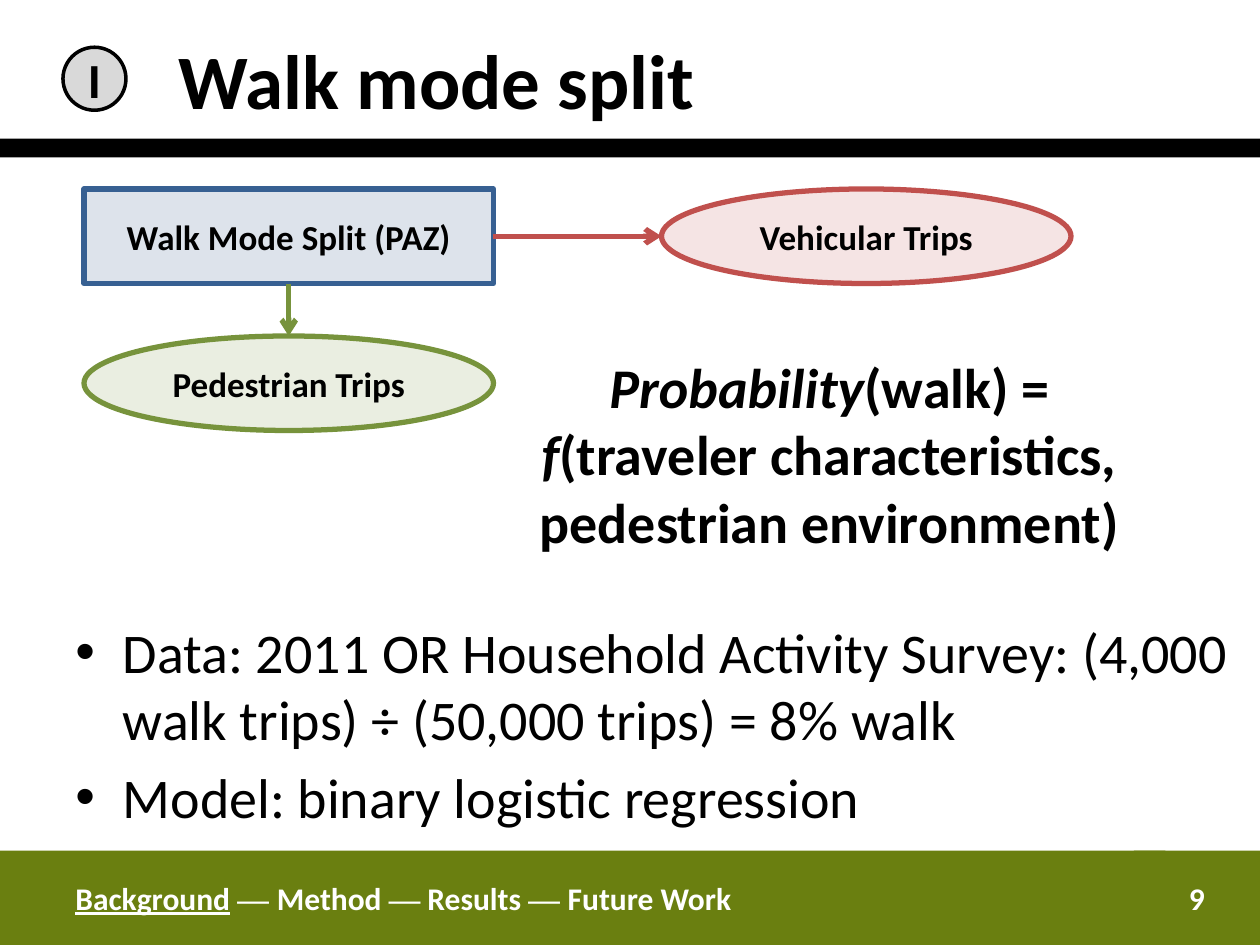
import pptx
import pptx.util
import pptx.dml.color
import pptx.enum.shapes
import pptx.enum.text
import pptx.oxml
import pptx.oxml.ns

RGB = pptx.dml.color.RGBColor
Pt = pptx.util.Pt
KIND = pptx.enum.shapes.MSO_SHAPE
ALIGN = pptx.enum.text.PP_ALIGN
ANCHOR = pptx.enum.text.MSO_ANCHOR

BLACK = RGB(0x00, 0x00, 0x00)
WHITE = RGB(0xFF, 0xFF, 0xFF)
GRAY = RGB(0xD9, 0xD9, 0xD9)
OLIVE = RGB(0x6A, 0x7F, 0x10)
NAVY = RGB(0x1F, 0x49, 0x7D)
BLUE = RGB(0x37, 0x60, 0x92)
RED = RGB(0xC0, 0x50, 0x4D)
GREEN = RGB(0x77, 0x93, 0x3C)

SANS = "Calibri"
SERIF = "Times New Roman"
COLS, ROWS = 120, 90
WIDE, HIGH = pptx.util.Inches(10), pptx.util.Inches(7.5)

BOLD = {"name": SANS, "bold": True}
PLAIN = {"name": SANS, "size": Pt(32)}
TITLE = {**BOLD, "size": Pt(44)}
BADGE = {**BOLD, "size": Pt(28)}
NODE = {**BOLD, "size": Pt(20)}
MATH = {**BOLD, "size": Pt(32)}
FOOT = {**BOLD, "size": Pt(18)}
ITALIC = {"italic": True}
DASH = {"name": SERIF}


def cells(*nums):
    """Turn column, row, column span and row span into lengths."""
    return [round(n * size / part) for n, size, part
            in zip(nums, (WIDE, HIGH) * 2, (COLS, ROWS) * 2)]


def apply(item, form):
    for key, val in form.items():
        setattr(item, key, val)


def add_xml(node, tag, **attrs):
    child = node.makeelement(pptx.oxml.ns.qn(tag), attrs)
    node.append(child)
    return child


def write(para, runs, form, color):
    """Add runs of (text, changes to the format)."""
    for text, diff in runs:
        run = para.add_run()
        run.text = text
        apply(run.font, {**form, **diff})
        run.font.color.rgb = color


def set_frame(shape, anchor=ANCHOR.MIDDLE, **more):
    apply(shape.text_frame,
          {"word_wrap": True, "vertical_anchor": anchor, **more})
    return shape.text_frame


def add_block(slide, kind, place, fill, alpha=None, edge=None, weight=3):
    shape = slide.shapes.add_shape(kind, *cells(*place))
    shape.shadow.inherit = False
    shape.fill.solid()
    shape.fill.fore_color.rgb = fill
    if alpha:
        tint = shape.fill._xPr.find(".//" + pptx.oxml.ns.qn("a:srgbClr"))
        add_xml(tint, "a:alpha", val=str(alpha * 1000))
    if edge is None:
        shape.line.fill.background()
    else:
        shape.line.color.rgb = edge
        shape.line.width = Pt(weight)
    return shape


def label(shape, runs, form, color=BLACK, align=ALIGN.CENTER, **more):
    para = set_frame(shape, **more).paragraphs[0]
    para.alignment = align
    write(para, runs, form, color)


def add_node(slide, kind, col, row, text, fill, edge):
    node = add_block(slide, kind, (col, row, 39, 9), fill, 15, edge)
    label(node, [(text, {})], NODE)
    return node


def add_arrow(slide, start, end, color):
    line = slide.shapes.add_connector(
        pptx.enum.shapes.MSO_CONNECTOR.STRAIGHT, *cells(*start, *end))
    line.line.color.rgb = color
    line.line.width = Pt(3)
    add_xml(line.line._get_or_add_ln(), "a:tailEnd", type="arrow")
    add_xml(line._element.spPr, "a:effectLst")
    return line


def add_text(slide, place):
    return slide.shapes.add_textbox(*cells(*place))


def add_list(slide, place, items):
    frame = set_frame(add_text(slide, place), ANCHOR.TOP)
    for i, text in enumerate(items):
        para = frame.add_paragraph() if i else frame.paragraphs[0]
        if i:
            para.space_before = Pt(6.4)
        props = para._p.get_or_add_pPr()
        props.set("marL", str(Pt(27)))
        props.set("indent", str(-Pt(27)))
        add_xml(props, "a:buFont", typeface="Arial")
        add_xml(props, "a:buChar", char="•")
        write(para, [(text, {})], PLAIN, BLACK)


def add_head(slide):
    add_block(slide, KIND.RECTANGLE, (0, 13.2, COLS, 1.8), BLACK)
    label(add_text(slide, (15.8, 0, 68, 15)), [("Walk mode split", {})],
          TITLE, align=ALIGN.LEFT)
    badge = add_block(slide, KIND.OVAL, (6, 4.5, 6, 6), GRAY,
                      edge=BLACK, weight=2)
    label(badge, [("I", {})], BADGE, margin_left=0, margin_right=0,
          margin_top=0, margin_bottom=0)


def add_flow(slide):
    split = add_node(slide, KIND.RECTANGLE, 8, 18, "Walk Mode Split (PAZ)",
                     NAVY, BLUE)
    right = add_arrow(slide, (47, 22.5), (63, 22.5), RED)
    right.begin_connect(split, 3)
    down = add_arrow(slide, (27.5, 27), (27.5, 32), GREEN)
    down.begin_connect(split, 2)
    walk = add_node(slide, KIND.OVAL, 8, 32, "Pedestrian Trips", GREEN, GREEN)
    down.end_connect(walk, 0)
    add_node(slide, KIND.OVAL, 63, 18, "Vehicular Trips", RED, RED)


def add_foot(slide):
    left, number, trail = [
        add_block(slide, KIND.RECTANGLE, (col, 81, span, 9), OLIVE)
        for col, span in ((0, 6), (108, 12), (6, 105))]
    label(number, [("9", {})], FOOT, WHITE)
    label(trail, [("Background", {"underline": True}), (" ", {}),
                  ("— ", DASH), ("Method ", {}), ("—", DASH),
                  (" Results ", {}), ("— ", DASH), ("Future Work", {})],
          FOOT, WHITE, ALIGN.LEFT)


def main():
    deck = pptx.Presentation()
    deck.slide_width, deck.slide_height = WIDE, HIGH
    slide = deck.slides.add_slide(deck.slide_layouts[6])
    add_head(slide)
    add_flow(slide)
    formula = add_text(slide, (46, 33, 66, 20.4))
    para = set_frame(formula).paragraphs[0]
    para.alignment = ALIGN.CENTER
    write(para, [("Probability", ITALIC), ("(walk) =", {})], MATH, BLACK)
    para.add_line_break()
    write(para, [("f", ITALIC), ("(traveler characteristics,", {})],
          MATH, BLACK)
    para.add_line_break()
    write(para, [("pedestrian environment)", {})], MATH, BLACK)
    add_list(slide, (6, 58.2, 113, 24), [
        "Data: 2011 OR Household Activity Survey: (4,000 walk trips) ÷ "
        "(50,000 trips) = 8% walk",
        "Model: binary logistic regression"])
    add_foot(slide)
    deck.save("out.pptx")


if __name__ == "__main__":
    main()
